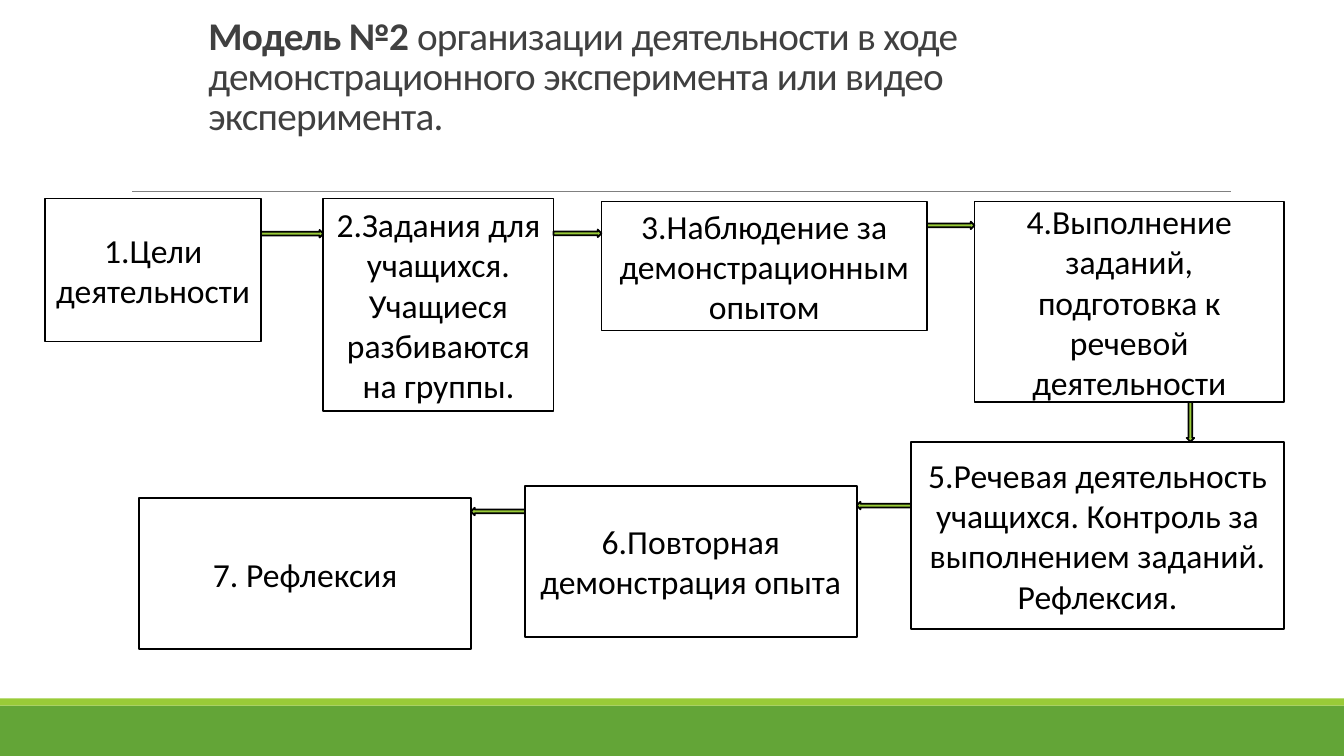
import pptx
import pptx.util
import pptx.dml.color
import pptx.enum.shapes
import pptx.enum.text
import pptx.oxml.ns
import lxml.etree

Cm = pptx.util.Cm
Pt = pptx.util.Pt
Preset = pptx.enum.shapes.MSO_SHAPE
Align = pptx.enum.text.PP_ALIGN
Anchor = pptx.enum.text.MSO_ANCHOR

COLOURS = {
    "paper": "FFFFFF",
    "ink": "000000",
    "title": "404040",
    "rule": "808080",
    "green": "63A537",
    "lime": "99CB38",
}
TITLE_FONT = {"name": "Calibri", "size": Pt(28)}
STEP_FONT = {"name": "Calibri", "size": Pt(24)}
TITLE_FRAME = {"word_wrap": True, "vertical_anchor": Anchor.BOTTOM}
STEP_FRAME = {"word_wrap": True, "vertical_anchor": Anchor.MIDDLE}
TITLE_RUNS = [
    ("Модель №2", True),
    (" организации деятельности в ходе демонстрационного эксперимента "
     "или видео эксперимента.", False),
]

STEPS = [
    (0, 0, 5.44, 3.61, ["1.Цели деятельности"]),
    (7.01, 0, 5.8, 5.36,
     ["2.Задания для учащихся.", "Учащиеся разбиваются на группы."]),
    (14.02, 0.08, 8.2, 3.25, ["3.Наблюдение за демонстрационным опытом"]),
    (23.42, 0.08, 7.8, 5.05,
     ["4.Выполнение заданий, подготовка к речевой деятельности"]),
    (21.82, 6.13, 9.4, 4.72,
     ["5.Речевая деятельность учащихся. Контроль за выполнением заданий. "
      "Рефлексия."]),
    (12.09, 7.24, 8.36, 3.81, ["6.Повторная демонстрация опыта"]),
    (2.37, 7.55, 8.36, 3.81, ["7. Рефлексия"]),
]
ARROW_LANES = [0.89, 0.88, 0.68, 28.86, 7.74, 7.89]
ARROW_THICKNESS = 0.19


def colour(name):
    return pptx.dml.color.RGBColor.from_string(COLOURS[name])


def apply_format(target, values):
    for attribute, value in values.items():
        setattr(target, attribute, value)


def write_run(paragraph, wording, font, ink):
    run = paragraph.add_run()
    run.text = wording
    apply_format(run.font, font)
    run.font.color.rgb = colour(ink)
    return run


def add_block(slide, preset, box, fill, outline=None):
    block = slide.shapes.add_shape(preset, *map(Cm, box))
    block.shadow.inherit = False
    block.fill.solid()
    block.fill.fore_color.rgb = colour(fill)
    if outline:
        block.line.color.rgb = colour(outline)
        block.line.width = Pt(1.25)
    else:
        block.line.fill.background()
    return block


def add_footer(slide, left, top, width, height):
    stripe = 0.18
    add_block(slide, Preset.RECTANGLE,
              (left, top + stripe, width, height - stripe), "green")
    add_block(slide, Preset.RECTANGLE, (left, top, width, stripe), "lime")


def add_heading(slide, left, top, width, height):
    rule_left, rule_top, rule_width = left - 1.67, top + 4.37, 27.68
    rule = slide.shapes.add_connector(
        pptx.enum.shapes.MSO_CONNECTOR.STRAIGHT,
        Cm(rule_left), Cm(rule_top), Cm(rule_left + rule_width), Cm(rule_top))
    rule.line.color.rgb = colour("rule")
    rule.line.width = Pt(0.5)
    lxml.etree.SubElement(rule.element.spPr, pptx.oxml.ns.qn("a:effectLst"))

    title = slide.shapes.add_textbox(*map(Cm, (left, top, width, height)))
    apply_format(title.text_frame, TITLE_FRAME)
    sentence = title.text_frame.paragraphs[0]
    sentence.line_spacing = 0.85
    for wording, bold in TITLE_RUNS:
        run = write_run(sentence, wording, {**TITLE_FONT, "bold": bold}, "title")
        run._r.get_or_add_rPr().set("spc", "-50")


def add_step(slide, box, lines):
    step = add_block(slide, Preset.RECTANGLE, box, "paper", "ink")
    apply_format(step.text_frame, STEP_FRAME)
    for index, wording in enumerate(lines):
        paragraph = (step.text_frame.add_paragraph() if index
                     else step.text_frame.paragraphs[0])
        paragraph.alignment = Align.CENTER
        write_run(paragraph, wording, STEP_FONT, "ink")


def add_step_arrow(slide, source, target, lane_x, lane_y):
    x, y, width, height = source
    next_x, next_y, next_width, next_height = target
    half = ARROW_THICKNESS / 2
    if next_x >= x + width:
        preset = Preset.RIGHT_ARROW
        box = (x + width, lane_y - half, next_x - x - width, ARROW_THICKNESS)
    elif next_x + next_width <= x:
        preset = Preset.LEFT_ARROW
        start = next_x + next_width
        box = (start, lane_y - half, x - start, ARROW_THICKNESS)
    else:
        preset = Preset.DOWN_ARROW
        box = (lane_x - half, y + height, ARROW_THICKNESS, next_y - y - height)
    add_block(slide, preset, box, "lime", "ink")


def add_flow(slide, left, top):
    boxes = [(left + x, top + y, width, height)
             for x, y, width, height, lines in STEPS]
    for box, step in zip(boxes, STEPS):
        add_step(slide, box, step[-1])
    for source, target, lane in zip(boxes, boxes[1:], ARROW_LANES):
        add_step_arrow(slide, source, target, left + lane, top + lane)


def main():
    deck = pptx.Presentation()
    deck.slide_width = Cm(33.87)
    deck.slide_height = Cm(19.05)
    slide = deck.slides.add_slide(deck.slide_layouts[6])
    slide.background.fill.solid()
    slide.background.fill.fore_color.rgb = colour("paper")
    add_footer(slide, 0, 17.6, 33.87, 1.45)
    add_heading(slide, 5, 0.46, 22.86, 3.15)
    add_flow(slide, 1.14, 5)
    deck.save("out.pptx")


if __name__ == "__main__":
    main()
